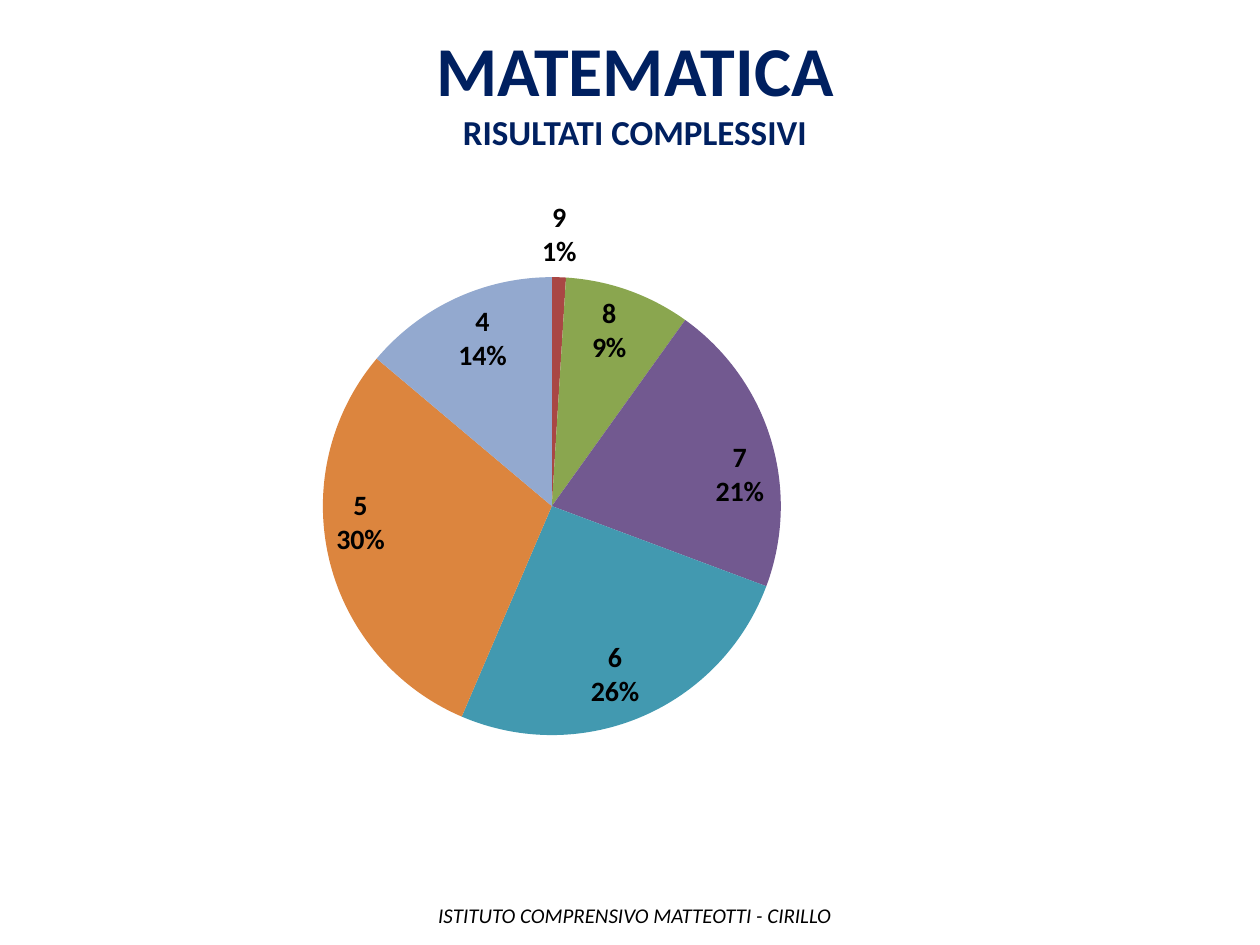
from lxml.etree import SubElement, QName
from pptx import Presentation
from pptx.chart.data import CategoryChartData
from pptx.dml.color import RGBColor
from pptx.enum.chart import XL_CHART_TYPE as ChartType, XL_LABEL_POSITION as LabelPosition
from pptx.enum.text import MSO_ANCHOR as Anchor, MSO_AUTO_SIZE as AutoSize, PP_ALIGN as Align
from pptx.oxml import parse_xml
from pptx.oxml.ns import qn
from pptx.util import Cm, Pt

HEADING = [("MATEMATICA", "title"), ("RISULTATI COMPLESSIVI", "subtitle")]
FOOTER = "ISTITUTO COMPRENSIVO MATTEOTTI - CIRILLO"
# grade, percentage of pupils, slice colour
GRADES = [
    ("10", 0, "4F81BD"),
    ("9", 1, "A94744"),
    ("8", 9, "8AA64F"),
    ("7", 21, "725990"),
    ("6", 26, "4299B0"),
    ("5", 30, "DC853E"),
    ("4", 14, "93A9CF"),
]
OUTSIDE_GRADE = "9"

THEME = {
    "font": "Calibri",
    "navy": "002060",
    "black": "000000",
    "title": 40,
    "subtitle": 20,
    "label": 16,
    "footer": 12,
}
PLOT = {"x": 0.27, "y": 0.16, "w": 0.46, "h": 0.81}  # shares of the chart area
CHART_NS = "http://schemas.openxmlformats.org/drawingml/2006/chart"


def style(font, size, colour="black", bold=False, italic=False):
    font.name = THEME["font"]
    font.size = Pt(THEME[size])
    font.bold, font.italic = bold, italic
    font.color.rgb = RGBColor.from_string(THEME[colour])


def add_heading(page):
    box = page.shapes.title
    box.left, box.top, box.width, box.height = Cm(3.5), Cm(0.4), Cm(18.6), Cm(2.82)
    frame = box.text_frame
    frame.auto_size = AutoSize.NONE
    frame.vertical_anchor = Anchor.TOP
    frame.text = "\n".join(text for text, _ in HEADING)
    for para, (_, size) in zip(frame.paragraphs, HEADING):
        para.alignment = Align.CENTER
        para.space_before = Pt(0)
        style(para.font, size, "navy", bold=True)


def add_footer(page):
    box = page.shapes.add_textbox(Cm(8.4), Cm(18.06), Cm(8.8), Cm(0.76))
    box.text_frame.word_wrap = False
    para = box.text_frame.paragraphs[0]
    para.text = FOOTER
    para.alignment = Align.CENTER
    style(para.font, "footer", italic=True)


def fix_plot_area(plot_area):
    """Place the pie itself by shares of the chart area."""
    for old in plot_area.findall(qn("c:layout")):
        plot_area.remove(old)
    layout = parse_xml(f'<c:layout xmlns:c="{CHART_NS}"><c:manualLayout/></c:layout>')
    settings = {"layoutTarget": "inner", "xMode": "edge", "yMode": "edge", **PLOT}
    for name, value in settings.items():
        SubElement(layout[0], QName(CHART_NS, name)).set("val", str(value))
    plot_area.insert(0, layout)


def show_grade_and_share(labels):
    """Show category and percentage on separate lines in a label element."""
    for name, value in (("showVal", "0"), ("showCatName", "1"), ("showPercent", "1")):
        labels.find(qn(f"c:{name}")).set("val", value)
    separator = parse_xml(f'<c:separator xmlns:c="{CHART_NS}">\n</c:separator>')
    labels.find(qn("c:showBubbleSize")).addnext(separator)


def label_slices(series):
    labels = series.data_labels
    labels.position = LabelPosition.INSIDE_END
    style(labels.font, "label", bold=True)
    show_grade_and_share(labels._element)
    for point_index, (grade, share, _) in enumerate(GRADES):
        if share and grade != OUTSIDE_GRADE:
            continue
        label = series.points[point_index].data_label
        label.position = LabelPosition.OUTSIDE_END
        style(label.font, "label", bold=True)
        element = labels._element.xpath(f"c:dLbl[c:idx/@val='{point_index}']")[0]
        if share:
            show_grade_and_share(element)
        else:
            for child in list(element)[1:]:
                element.remove(child)
            SubElement(element, qn("c:delete")).set("val", "1")


def add_pie(page):
    data = CategoryChartData()
    data.categories = [grade for grade, _, _ in GRADES]
    data.add_series("Series 1", [share for _, share, _ in GRADES])
    chart = page.shapes.add_chart(
        ChartType.PIE, Cm(1.09), Cm(3.73), Cm(20.07), Cm(11.46), data).chart
    chart.has_legend = chart.has_title = False
    style(chart.font, "label")
    plot = chart.plots[0]
    plot.vary_by_categories = True
    series = plot.series[0]
    for point_index, (_, _, colour) in enumerate(GRADES):
        fill = series.points[point_index].format.fill
        fill.solid()
        fill.fore_color.rgb = RGBColor.from_string(colour)
    label_slices(series)
    fix_plot_area(series._element.getparent().getparent())


def main():
    deck = Presentation()
    deck.slide_width, deck.slide_height = Cm(25.4), Cm(19.05)
    page = deck.slides.add_slide(deck.slide_layouts.get_by_name("Title Only"))
    add_heading(page)
    add_footer(page)
    add_pie(page)
    deck.save("out.pptx")


if __name__ == "__main__":
    main()
